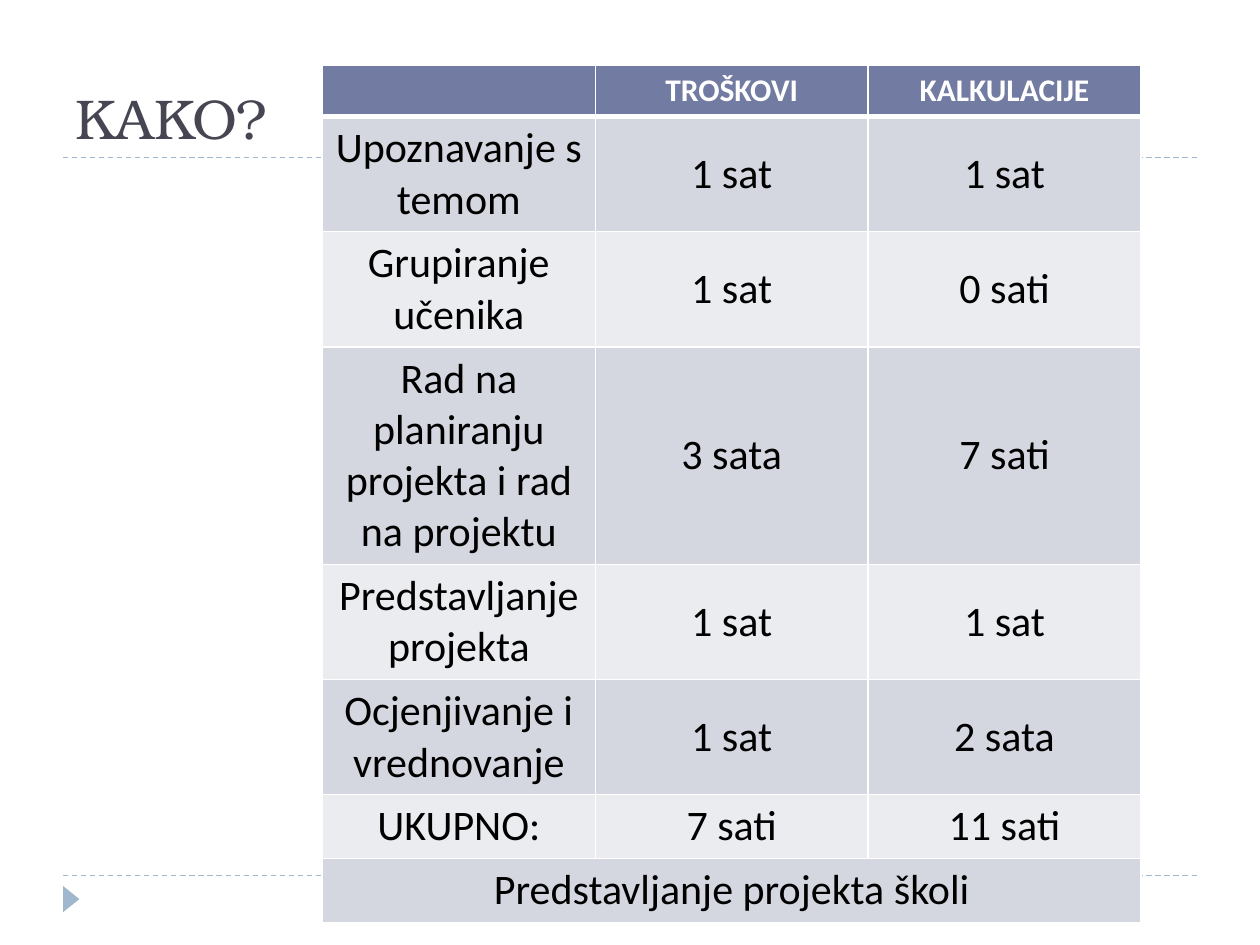
from lxml.etree import SubElement
from pptx import Presentation
from pptx.dml.color import RGBColor
from pptx.enum.dml import MSO_LINE
from pptx.enum.shapes import MSO_CONNECTOR, MSO_SHAPE
from pptx.enum.text import MSO_ANCHOR, PP_ALIGN
from pptx.oxml.ns import qn
from pptx.util import Cm, Pt

TITLE = "KAKO?"
HEADER = ["", "TROŠKOVI", "KALKULACIJE"]
ROWS = [
    ("Upoznavanje s temom", "1 sat", "1 sat"),
    ("Grupiranje učenika", "1 sat", "0 sati"),
    ("Rad na planiranju projekta i rad na projektu", "3 sata", "7 sati"),
    ("Predstavljanje projekta", "1 sat", "1 sat"),
    ("Ocjenjivanje i vrednovanje", "1 sat", "2 sata"),
    ("UKUPNO:", "7 sati", "11 sati"),
]
FOOTER = "Predstavljanje projekta školi"
ROW_HEIGHTS = [0.73, 1.68, 1.68, 3.15, 1.68, 1.68, 0.91, 0.91]
COL_WIDTH = 5.5
RULES_Y = [17.65, 3.18]

THEME = {
    "title_font": "TeX Gyre Bonum", "body_font": "Calibri",
    "title_size": 32, "header_size": 18, "body_size": 24,
    "title": "464653", "accent": "9FB8CD", "header": "727CA3",
    "bands": ["D5D7E0", "EBECF0"], "white": "FFFFFF", "text": "000000",
}


def rgb(name):
    return RGBColor.from_string(name)


def write(tf, text, font=THEME["body_font"], size=THEME["body_size"],
          color=THEME["text"], bold=False, align=PP_ALIGN.CENTER):
    p = tf.paragraphs[0]
    p.alignment = align
    if text:
        r = p.add_run()
        r.text = text
        r.font.name = font
        r.font.size = Pt(size)
        r.font.bold = bold
        r.font.color.rgb = rgb(color)


def style_cell(cell, fill, bottom=1):
    tcPr = cell._tc.get_or_add_tcPr()
    for side, width in (("L", 1), ("R", 1), ("T", 1), ("B", bottom)):
        ln = SubElement(tcPr, qn(f"a:ln{side}"), w=str(Pt(width)))
        solid = SubElement(ln, qn("a:solidFill"))
        SubElement(solid, qn("a:srgbClr"), val=THEME["white"])
    cell.fill.solid()
    cell.fill.fore_color.rgb = rgb(fill)


prs = Presentation()
prs.slide_width, prs.slide_height = Cm(25.4), Cm(19.05)
slide = prs.slides.add_slide(prs.slide_layouts[5])
shapes = slide.shapes

for y in RULES_Y:
    line = shapes.add_connector(MSO_CONNECTOR.STRAIGHT, Cm(1.27), Cm(y), Cm(24.13), Cm(y))
    line.line.color.rgb = rgb(THEME["accent"])
    line.line.width = Pt(0.75)
    line.line.dash_style = MSO_LINE.DASH
    SubElement(line._element.spPr, qn("a:effectLst"))

marker = shapes.add_shape(MSO_SHAPE.ISOSCELES_TRIANGLE, Cm(1.17), Cm(17.96), Cm(0.53), Cm(0.33))
marker.rotation = 90
marker.shadow.inherit = False
marker.fill.solid()
marker.fill.fore_color.rgb = rgb(THEME["accent"])
marker.line.fill.background()

title = shapes.title
title.left, title.top, title.width, title.height = Cm(1.27), Cm(0.43), Cm(22.86), Cm(2.74)
title.text_frame.vertical_anchor = MSO_ANCHOR.BOTTOM
write(title.text_frame, TITLE, font=THEME["title_font"], size=THEME["title_size"],
      color=THEME["title"], align=PP_ALIGN.LEFT)

grid = [HEADER, *ROWS, (FOOTER, "", "")]
frame = shapes.add_table(len(grid), len(HEADER), Cm(6.5), Cm(1.32),
                         Cm(COL_WIDTH * len(HEADER)), Cm(sum(ROW_HEIGHTS)))
table = frame.table
for col in table.columns:
    col.width = Cm(COL_WIDTH)
for i, (values, height) in enumerate(zip(grid, ROW_HEIGHTS)):
    table.rows[i].height = Cm(height)
    for j, text in enumerate(values):
        cell = table.cell(i, j)
        if i == 0:
            style_cell(cell, THEME["header"], bottom=3)
            write(cell.text_frame, text, size=THEME["header_size"],
                  color=THEME["white"], bold=True)
        else:
            style_cell(cell, THEME["bands"][(i - 1) % 2])
            cell.vertical_anchor = MSO_ANCHOR.MIDDLE
            write(cell.text_frame, text)
last = len(grid) - 1
table.cell(last, 0).merge(table.cell(last, len(HEADER) - 1))
frame.height = Cm(17.02)

prs.save("out.pptx")
